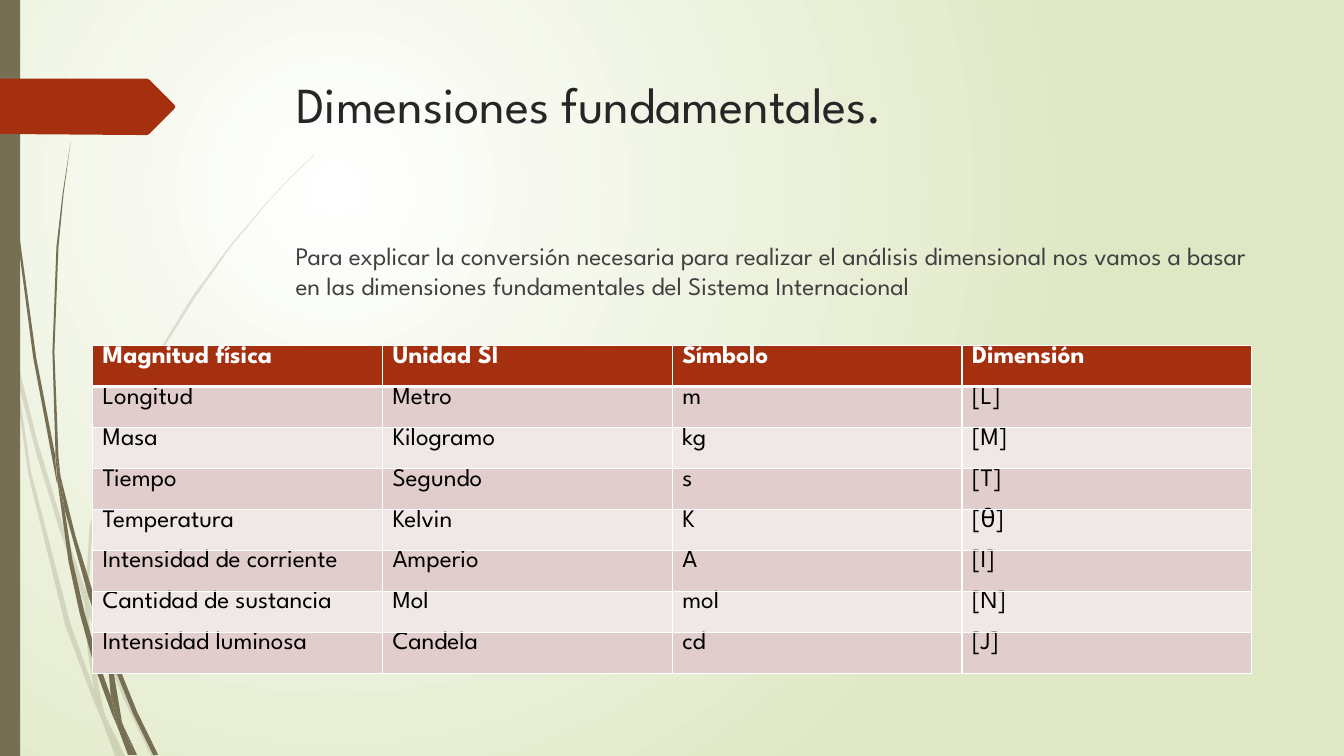
from dataclasses import dataclass

from lxml import etree
from pptx import Presentation
from pptx.dml.color import RGBColor
from pptx.enum.shapes import MSO_SHAPE
from pptx.oxml.ns import qn
from pptx.util import Pt

RECT = MSO_SHAPE.RECTANGLE
FONT = "League Spartan"
COLORS = {
    "white": "FFFFFF", "black": "000000", "glow": "DFE8C4", "olive": "766F54",
    "rust": "A53010", "title": "262626", "body": "404040",
    "odd": "E1CDCC", "even": "F0E8E7",
}
GRID = Pt(0.72)  # one outline unit, a hundredth of an inch


@dataclass
class Outline:
    points: list[tuple[int, int]]
    color: str = "olive"
    opacity: int = 100


@dataclass
class TextBlock:
    text: str
    left: float
    top: float
    width: float
    height: float
    size: float
    color: str


# Grass blades, pale ones behind
PALE_BLADES = [
    [(11, 350), (9, 322), (0, 282), (0, 299), (10, 344)],
    [(58, 522), (84, 599), (85, 586), (62, 520), (36, 434), (14, 345), (17, 376), (36, 450)],
    [(92, 607), (88, 596), (88, 610), (123, 694), (150, 750), (155, 750), (127, 692)],
    [(119, 750), (124, 750), (105, 711)],
    [(93, 683), (70, 619), (31, 469), (17, 376), (11, 350), (28, 470), (65, 621), (92, 693),
     (101, 714), (99, 707)],
    [(84, 599), (87, 646), (93, 683), (96, 692), (105, 711), (103, 706), (91, 646), (88, 610),
     (88, 608)],
    [(88, 584), (92, 522), (110, 462), (133, 405), (160, 349), (193, 296), (229, 245),
     (268, 198), (290, 175), (312, 154), (312, 153), (289, 175), (268, 197), (228, 244),
     (191, 294), (158, 348), (130, 403), (107, 461), (89, 522), (85, 584), (85, 586), (88, 596)],
    [(101, 714), (114, 750), (119, 750)],
    [(88, 608), (88, 610), (88, 596), (85, 586), (84, 599)],
    [(96, 692), (93, 683), (99, 707), (101, 714), (119, 750), (105, 711)],
]
DARK_BLADES = [
    [(7, 110), (17, 233), (33, 355), (56, 477), (57, 481), (55, 457), (55, 453), (36, 355),
     (19, 232), (8, 109), (5, 48), (4, 0), (3, 0), (4, 48)],
    [(88, 592), (106, 645), (106, 631), (93, 590), (75, 532), (60, 472), (64, 505)],
    [(113, 649), (110, 641), (111, 656), (132, 708), (152, 749), (157, 749), (136, 706)],
    [(110, 691), (98, 657), (84, 608), (72, 556), (64, 505), (57, 477), (68, 557), (79, 608),
     (93, 659), (111, 708), (117, 722), (116, 717)],
    [(60, 472), (58, 453), (54, 349), (58, 245), (63, 193), (70, 141), (62, 193), (56, 245),
     (52, 349), (55, 449)],
    [(133, 749), (136, 749), (122, 719)],
    [(57, 477), (64, 505), (60, 472), (55, 449), (55, 453)],
    [(111, 633), (115, 592), (125, 552), (140, 513), (158, 476), (180, 440), (205, 406),
     (231, 374), (245, 359), (261, 344), (260, 344), (245, 358), (231, 373), (204, 405),
     (178, 439), (156, 474), (137, 512), (122, 551), (111, 591), (106, 631), (110, 641)],
    [(117, 722), (127, 749), (131, 749)],
    [(106, 645), (110, 691), (116, 706), (122, 719), (121, 716), (111, 656), (109, 651)],
    [(106, 645), (109, 651), (111, 656), (110, 641), (106, 631)],
    [(116, 706), (110, 691), (116, 717), (117, 722), (130, 749), (133, 749), (122, 719)],
]
ARROW_TAG = [(173, 108), (148, 133), (146, 134), (136, 134), (0, 133), (0, 78), (136, 78),
             (146, 78), (148, 79), (173, 104), (174, 106)]

TEXTS = [
    TextBlock("Dimensiones fundamentales.", 204.5, 49, 702, 100.8, 36, "title"),
    TextBlock("Para explicar la conversión necesaria para realizar el análisis dimensional "
              "nos vamos a basar en las dimensiones fundamentales del Sistema Internacional",
              204, 167.8, 702, 70, 18, "body"),
]

MAGNITUDES = [
    ("Magnitud física", "Unidad SI", "Símbolo", "Dimensión"),
    ("Longitud", "Metro", "m", "[L]"),
    ("Masa", "Kilogramo", "kg", "[M]"),
    ("Tiempo", "Segundo", "s", "[T]"),
    ("Temperatura", "Kelvin", "K", "[θ]"),
    ("Intensidad de corriente", "Amperio", "A", "[I]"),
    ("Cantidad de sustancia", "Mol", "mol", "[N]"),
    ("Intensidad luminosa", "Candela", "cd", "[J]"),
]
TABLE_LEFT, TABLE_TOP, COL_WIDTH, ROW_HEIGHT = 66.2, 246.8, 207, 29.28


def rgb(name: str) -> RGBColor:
    return RGBColor.from_string(COLORS[name])


def paint(sp, color: str) -> None:
    sp.shadow.inherit = False
    sp.fill.solid()
    sp.fill.fore_color.rgb = rgb(color)
    sp.line.fill.background()


def set_font(p, size: float, color: str, bold: bool = False) -> None:
    p.font.name = FONT
    p.font.size = Pt(size)
    p.font.bold = bold
    p.font.color.rgb = rgb(color)


def draw_background(s) -> None:
    fill = s.background.fill
    fill.gradient()
    for stop, color in zip(fill.gradient_stops, ("white", "glow")):
        stop.color.rgb = rgb(color)
    grad = s.element.find(".//" + qn("a:gradFill"))
    grad.remove(grad.find(qn("a:lin")))
    circle = etree.SubElement(grad, qn("a:path"), {"path": "circle"})
    etree.SubElement(circle, qn("a:fillToRect"),
                     {"l": "50000", "t": "50000", "r": "100000", "b": "100000"})


def draw_outline(s, outline: Outline) -> None:
    start, *rest = outline.points
    builder = s.shapes.build_freeform(*start, scale=GRID)
    builder.add_line_segments(rest, close=True)
    sp = builder.convert_to_shape()
    paint(sp, outline.color)
    if outline.opacity < 100:
        clr = sp.fill._xPr.find(qn("a:solidFill"))[0]
        etree.SubElement(clr, qn("a:alpha"), {"val": str(outline.opacity * 1000)})


def draw_text(s, block: TextBlock) -> None:
    box = s.shapes.add_textbox(Pt(block.left), Pt(block.top), Pt(block.width), Pt(block.height))
    tf = box.text_frame
    tf.word_wrap = True
    p = tf.paragraphs[0]
    p.text = block.text
    set_font(p, block.size, block.color)


def set_borders(cell, top: int, bottom: int) -> None:
    widths = {"a:lnL": 1, "a:lnR": 1, "a:lnT": top, "a:lnB": bottom}
    for i, (tag, width) in enumerate(widths.items()):
        ln = etree.Element(qn(tag), {"w": str(Pt(width))})
        solid = etree.SubElement(ln, qn("a:solidFill"))
        etree.SubElement(solid, qn("a:srgbClr"), {"val": COLORS["white"]})
        cell._tc.get_or_add_tcPr().insert(i, ln)


def draw_table(s, rows: list[tuple[str, ...]]) -> None:
    n_rows, n_cols = len(rows), len(rows[0])
    table = s.shapes.add_table(n_rows, n_cols, Pt(TABLE_LEFT), Pt(TABLE_TOP),
                               Pt(COL_WIDTH * n_cols), Pt(ROW_HEIGHT * n_rows)).table
    for r, row in enumerate(rows):
        table.rows[r].height = Pt(ROW_HEIGHT)
        header = r == 0
        fill = "rust" if header else "odd" if r % 2 else "even"
        for c, text in enumerate(row):
            cell = table.cell(r, c)
            cell.margin_top = cell.margin_bottom = 0
            cell.fill.solid()
            cell.fill.fore_color.rgb = rgb(fill)
            set_borders(cell, top=3 if r == 1 else 1, bottom=3 if header else 1)
            p = cell.text_frame.paragraphs[0]
            p.text = text
            set_font(p, 18, "white" if header else "black", bold=header)


def main() -> None:
    prs = Presentation()
    prs.slide_width, prs.slide_height = Pt(960), Pt(540)
    s = prs.slides.add_slide(prs.slide_layouts[6])
    draw_background(s)

    # Side decoration
    for points in PALE_BLADES:
        draw_outline(s, Outline(points, opacity=20))
    for points in DARK_BLADES:
        draw_outline(s, Outline(points))
    paint(s.shapes.add_shape(RECT, 0, 0, Pt(14.4), Pt(540)), "olive")
    draw_outline(s, Outline(ARROW_TAG, "rust"))

    # Content
    for block in TEXTS:
        draw_text(s, block)
    draw_table(s, MAGNITUDES)
    prs.save("out.pptx")


if __name__ == "__main__":
    main()
